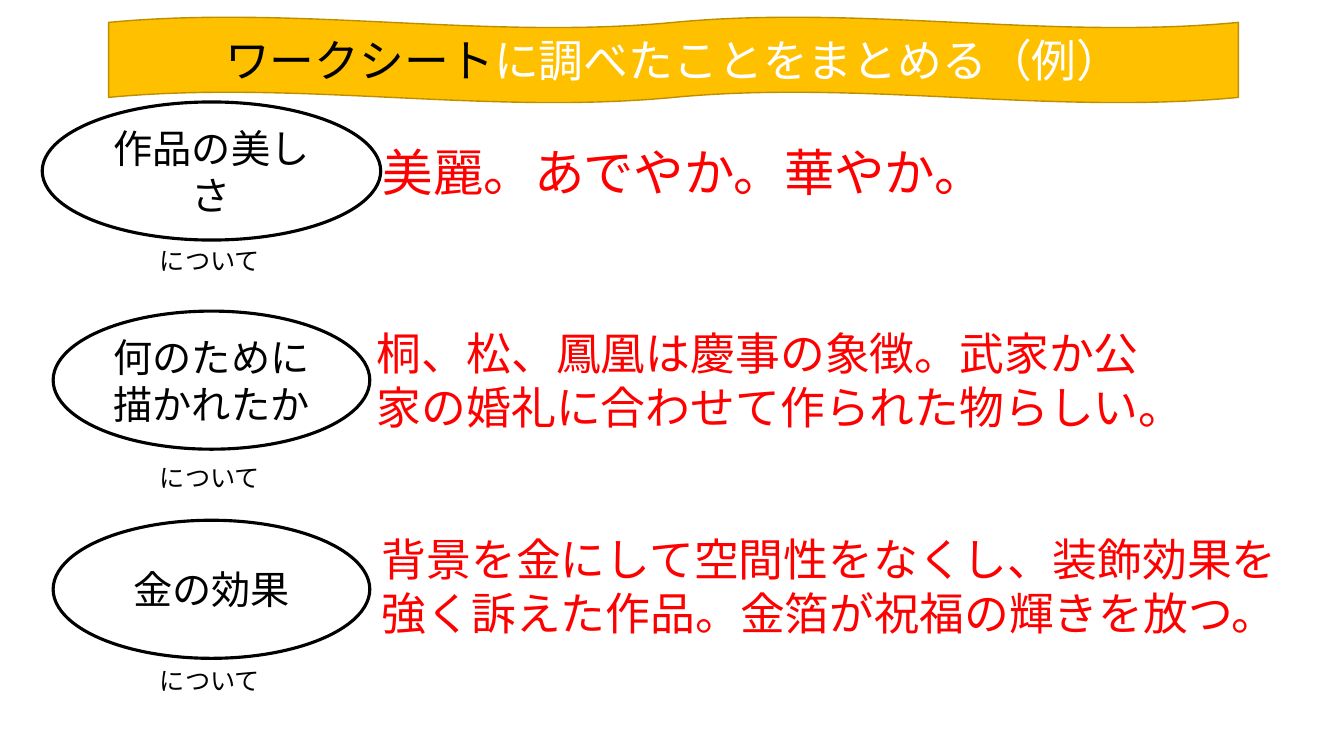
from lxml import etree
from pptx import Presentation
from pptx.dml.color import RGBColor
from pptx.enum import lang, shapes, text
from pptx.oxml import ns
from pptx.util import Cm, Pt

BLACK = RGBColor(0x00, 0x00, 0x00)
WHITE = RGBColor(0xFF, 0xFF, 0xFF)
RED = RGBColor(0xFF, 0x00, 0x00)
GOLD = RGBColor(0xFF, 0xC0, 0x00)
DARK_GOLD = RGBColor(0xBD, 0x8E, 0x00)

LATIN_FONT = "Calibri"
JAPANESE_FONT = "Noto Sans CJK JP"

TOPIC_CENTER = 5.33
TOPIC_HEIGHT = 3.48
FIRST_TOP = 2.57
ROW_PITCH = 5.27

# topic lines, topic width, "about" offset, answer, its size, its box (offset in row)
ROWS = [
    (["作品の美しさ"], 8.53, 3.48,
     "美麗。あでやか。華やか。", 36, (9.4, 0.86, 19.66, 1.8)),
    (["何のために", "描かれたか"], 7.98, 3.69,
     "桐、松、鳳凰は慶事の象徴。武家か公家の婚礼に合わせて作られた物らしい。",
     32, (9.25, 0.24, 20.57, 3)),
    (["金の効果"], 7.98, 3.53,
     "背景を金にして空間性をなくし、装飾効果を強く訴えた作品。金箔が祝福の輝きを放つ。",
     32, (9.37, 0.17, 23.09, 3)),
]


def add_run(paragraph, words, size, color, font=LATIN_FONT):
    run = paragraph.add_run()
    run.text = words
    run.font.size = Pt(size)
    run.font.color.rgb = color
    run.font.name = font
    run.font.language_id = lang.MSO_LANGUAGE_ID.JAPANESE
    east_asian = etree.SubElement(run.font._element, ns.qn("a:ea"))
    east_asian.set("typeface", JAPANESE_FONT)


def add_outlined(slide, kind, box, fill, line, width):
    """Add a filled preset shape with a coloured outline; box is in cm."""
    shape = slide.shapes.add_shape(kind, *map(Cm, box))
    shape.shadow.inherit = False
    shape.fill.solid()
    shape.fill.fore_color.rgb = fill
    shape.line.color.rgb = line
    shape.line.width = Pt(width)
    return shape


def add_caption(slide, box, words, size, color, font=LATIN_FONT):
    frame = slide.shapes.add_textbox(*map(Cm, box)).text_frame
    frame.word_wrap = True
    frame.auto_size = text.MSO_AUTO_SIZE.SHAPE_TO_FIT_TEXT
    add_run(frame.paragraphs[0], words, size, color, font)


def add_topic(slide, box, lines):
    ellipse = add_outlined(slide, shapes.MSO_SHAPE.OVAL, box, WHITE, BLACK, 2.25)
    frame = ellipse.text_frame
    frame.vertical_anchor = text.MSO_ANCHOR.MIDDLE
    for index, line in enumerate(lines):
        paragraph = frame.add_paragraph() if index else frame.paragraphs[0]
        paragraph.alignment = text.PP_ALIGN.CENTER
        add_run(paragraph, line, 28, BLACK)


def add_worksheet_row(slide, top, row):
    """Place one topic, its "about" caption and its answer below the given top."""
    topic, width, about_offset, answer, size, answer_box = row
    left, offset, answer_width, answer_height = answer_box
    add_topic(slide, (TOPIC_CENTER - width / 2, top, width, TOPIC_HEIGHT), topic)
    add_caption(slide, (3.78, top + about_offset, 3.15, 1.02), "について", 18, BLACK)
    add_caption(slide, (left, top + offset, answer_width, answer_height),
                answer, size, RED, JAPANESE_FONT)


def add_banner(slide, box):
    """Draw the wave and lay the slide title over it."""
    add_outlined(slide, shapes.MSO_SHAPE.DOUBLE_WAVE, box, GOLD, DARK_GOLD, 1)
    title = slide.shapes.title
    title.left, title.top, title.width, title.height = map(Cm, box)
    slide.shapes.element.append(title.element)
    frame = title.text_frame
    frame.auto_size = text.MSO_AUTO_SIZE.NONE
    frame.vertical_anchor = text.MSO_ANCHOR.MIDDLE
    heading = frame.paragraphs[0]
    heading.alignment = text.PP_ALIGN.CENTER
    add_run(heading, "ワークシート", 32, BLACK)
    add_run(heading, "に調べたことをまとめる（例）", 32, WHITE)


def main():
    deck = Presentation()
    deck.slide_width, deck.slide_height = Cm(33.87), Cm(19.05)
    slide = deck.slides.add_slide(deck.slide_layouts.get_by_name("Title Only"))
    for index, row in enumerate(ROWS):
        add_worksheet_row(slide, FIRST_TOP + index * ROW_PITCH, row)
    add_banner(slide, (2.74, 0.43, 28.47, 2.16))
    deck.save("out.pptx")


if __name__ == "__main__":
    main()
